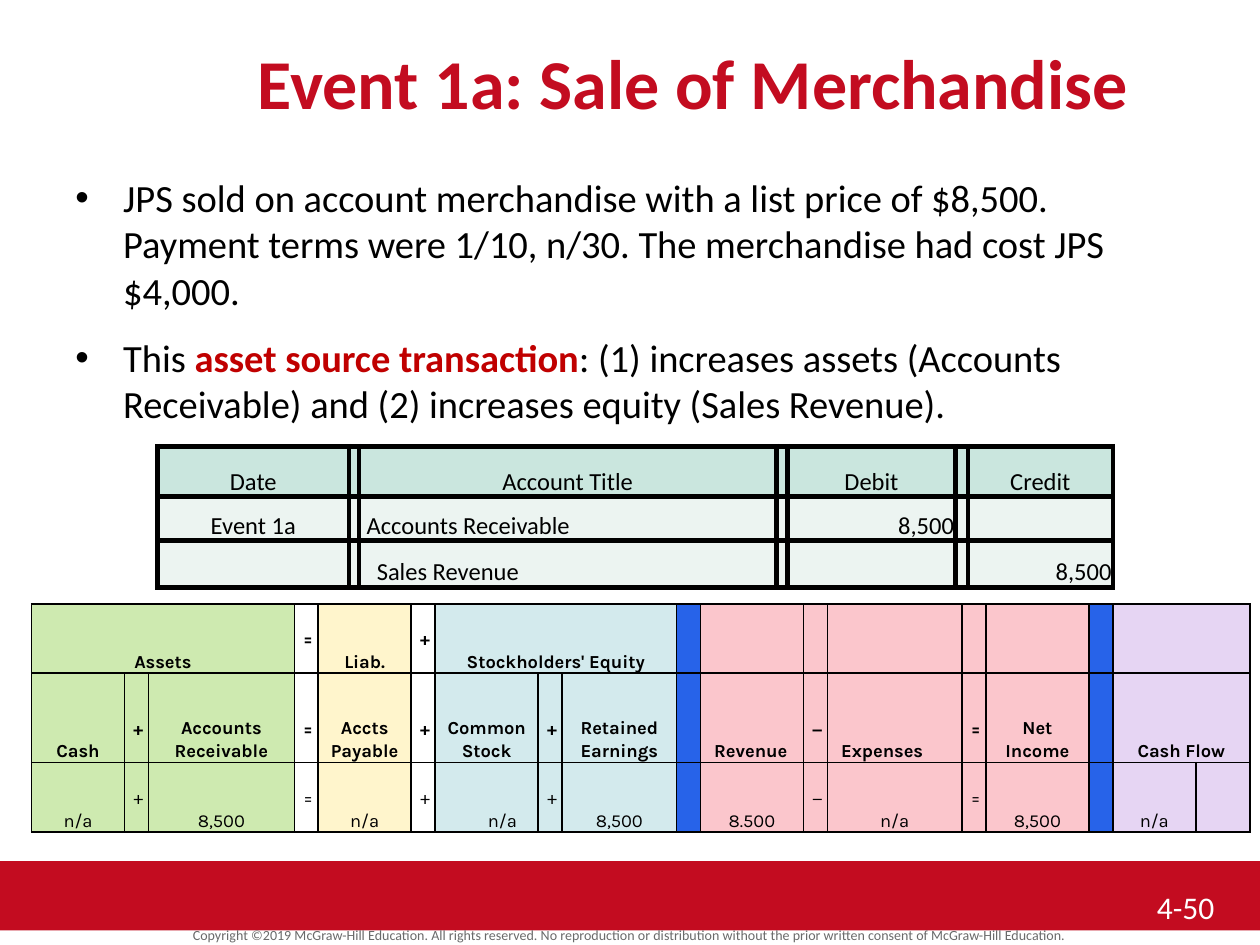
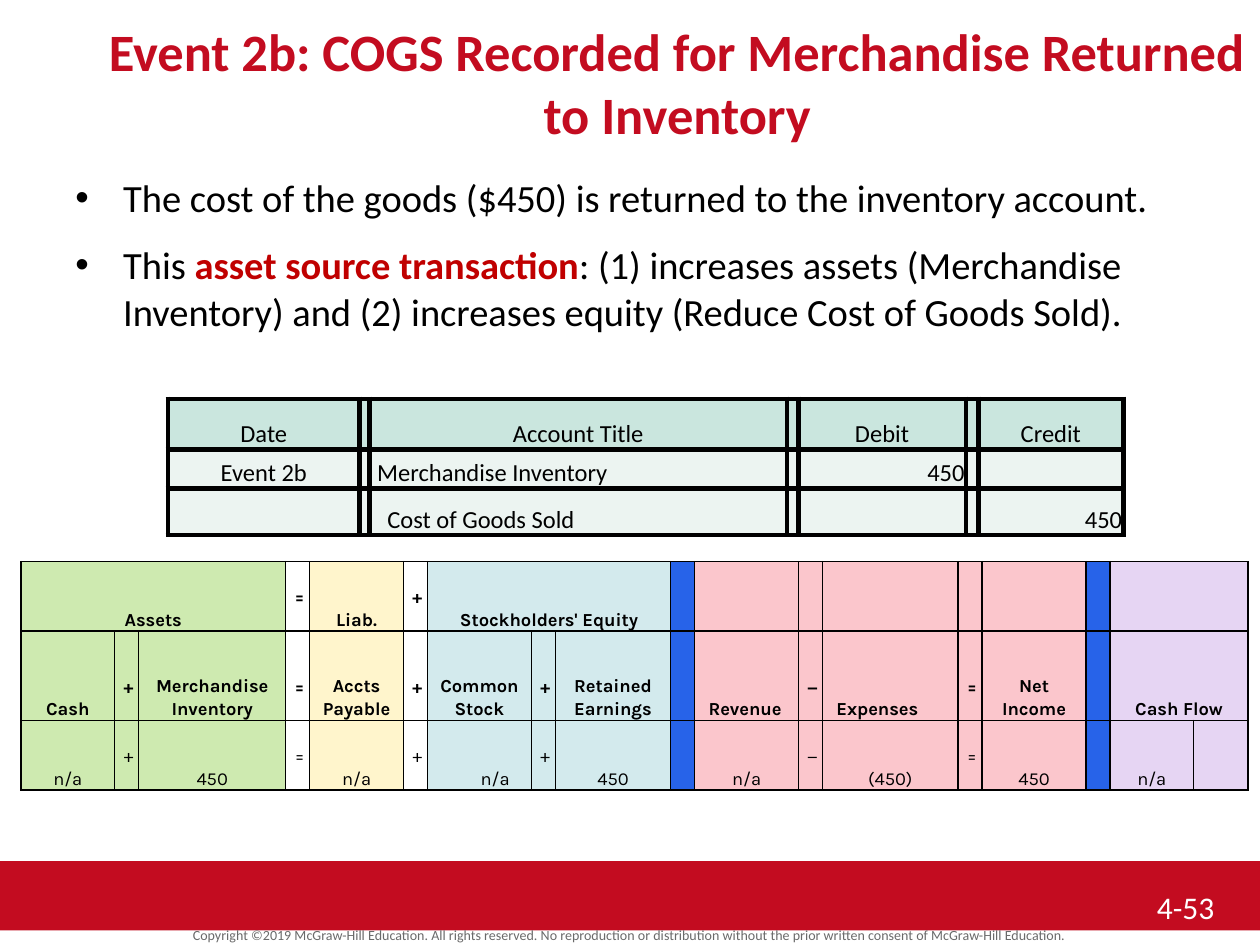
import dataclasses

import lxml.etree
import pptx
import pptx.dml.color
import pptx.enum.shapes
import pptx.enum.text
import pptx.oxml
import pptx.oxml.ns
import pptx.util

RGBColor = pptx.dml.color.RGBColor
Align = pptx.enum.text.PP_ALIGN
Anchor = pptx.enum.text.MSO_ANCHOR
Inches = pptx.util.Inches
Pt = pptx.util.Pt
qn = pptx.oxml.ns.qn

SLIDE_WIDTH, SLIDE_HEIGHT = Inches(10), Inches(7.5)
GRID_COLUMNS, GRID_ROWS = 120, 90

BLACK = RGBColor(0x00, 0x00, 0x00)
WHITE = RGBColor(0xFF, 0xFF, 0xFF)
BRAND_RED = RGBColor(0xC3, 0x0C, 0x20)
TERM_RED = RGBColor(0xC0, 0x00, 0x00)
GRAY = RGBColor(0x6A, 0x6A, 0x6A)
JOURNAL_HEAD = RGBColor(0xCA, 0xE6, 0xDE)
JOURNAL_BODY = RGBColor(0xEC, 0xF4, 0xF1)
ASSETS = RGBColor(0xCE, 0xEA, 0xB0)
LIABILITIES = RGBColor(0xFF, 0xF5, 0xCC)
EQUITY = RGBColor(0xD3, 0xEA, 0xED)
DIVIDER = RGBColor(0x27, 0x63, 0xE9)
INCOME = RGBColor(0xFB, 0xC6, 0xCC)
CASH_FLOW = RGBColor(0xE6, 0xD5, 0xF3)

COPYRIGHT = ("Copyright ©2019 McGraw-Hill Education. All rights reserved. No reproduction "
             "or distribution without the prior written consent of McGraw-Hill Education.")
TERM = "asset source transaction"

JOURNAL_COLUMNS = [1.52, 0.08, 3.31, 0.09, 1.33, 0.1, 1.15]
EQUATION_COLUMNS = [0.74, 0.19, 1.16, 0.19, 0.74, 0.19, 0.82, 0.19, 0.91,
                    0.19, 0.82, 0.19, 1.07, 0.19, 0.82, 0.19, 0.66, 0.43]
EQUATION_FILLS = ([ASSETS] * 3 + [None, LIABILITIES, None] + [EQUITY] * 3
                  + [DIVIDER] + [INCOME] * 5 + [DIVIDER] + [CASH_FLOW] * 2)
EQUATION_ROWS = [0.55, 0.71, 0.55]
EQUATION_SPANS = [(0, 0, 2), (0, 6, 8), (0, 16, 17), (1, 16, 17)]
OPERATORS = {1: "+", 3: "=", 5: "+", 7: "+", 11: "−", 13: "="}
GROUPS = {0: "Assets", 3: "=", 4: "Liab.", 5: "+", 6: "Stockholders' Equity"}
AMOUNT_COLUMNS = [0, 2, 4, 6, 8, 10, 12, 14, 16]
LEFT_HEADINGS = ("Revenue", "Expenses")
COMMON_STOCK = 6


@dataclasses.dataclass
class Box:
    column: float
    row: float
    columns: float
    rows: float

    def place(self):
        across, down = SLIDE_WIDTH / GRID_COLUMNS, SLIDE_HEIGHT / GRID_ROWS
        return (round(self.column * across), round(self.row * down),
                round(self.columns * across), round(self.rows * down))


def write(para, text, size=22, color=BLACK, bold=False, font="Calibri",
          align=Align.LEFT, line_spacing=1.0):
    span = para.add_run()
    span.text = text
    span.font.name = font
    span.font.size = Pt(size)
    span.font.bold = bold
    span.font.color.rgb = color
    para.alignment = align
    para.line_spacing = line_spacing


def add_text_box(page, box):
    frame = page.shapes.add_textbox(*box.place()).text_frame
    frame.word_wrap = True
    return frame


def add_bullet(para):
    properties = para._p.get_or_add_pPr()
    properties.set("marL", str(Inches(0.38)))
    properties.set("indent", str(-Inches(0.38)))
    lxml.etree.SubElement(properties, qn("a:buFont")).set("typeface", "Arial")
    lxml.etree.SubElement(properties, qn("a:buChar")).set("char", "•")


def add_title(page, box, text, size):
    title = page.shapes.title
    title.left, title.top, title.width, title.height = box.place()
    frame = title.text_frame
    frame.word_wrap = True
    frame.auto_size = pptx.enum.text.MSO_AUTO_SIZE.NONE
    frame.vertical_anchor = Anchor.TOP
    write(frame.paragraphs[0], text, size=size, color=BRAND_RED, bold=True, align=Align.CENTER)


def add_body(page, box, fact, effect):
    frame = add_text_box(page, box)
    first, second = frame.paragraphs[0], frame.add_paragraph()
    add_bullet(first)
    write(first, fact)
    add_bullet(second)
    second.space_before = Pt(12)
    write(second, "This ")
    write(second, TERM, color=TERM_RED, bold=True)
    write(second, effect)


def add_footer(page, number):
    band = page.shapes.add_shape(pptx.enum.shapes.MSO_SHAPE.RECTANGLE,
                                 *Box(0, 82, GRID_COLUMNS, 6.6).place())
    band.shadow.inherit = False
    band.fill.solid()
    band.fill.fore_color.rgb = BRAND_RED
    band.line.fill.background()
    frame = add_text_box(page, Box(0, 88, GRID_COLUMNS, 2.3))
    frame.margin_top = frame.margin_bottom = 0
    frame.vertical_anchor = Anchor.MIDDLE
    write(frame.paragraphs[0], COPYRIGHT, size=8, color=GRAY,
          align=Align.CENTER, line_spacing=0.8)
    frame = add_text_box(page, Box(109, 84, 11, 5))
    write(frame.paragraphs[0], number, size=18, color=WHITE)


def draw_borders(cell, width):
    properties = cell._tc.get_or_add_tcPr()
    for index, side in enumerate(("lnL", "lnR", "lnT", "lnB")):
        line = pptx.oxml.parse_xml(
            f'<a:{side} {pptx.oxml.ns.nsdecls("a")} w="{Pt(width)}">'
            f'<a:solidFill><a:srgbClr val="{BLACK}"/></a:solidFill></a:{side}>')
        properties.insert(index, line)


def format_cell(cell, text, fill, border, left=0.0, right=0.0, bottom=0.0, **style):
    cell.margin_left, cell.margin_right = Inches(left), Inches(right)
    cell.margin_top, cell.margin_bottom = 0, Inches(bottom)
    cell.vertical_anchor = Anchor.BOTTOM
    if fill is None:
        cell.fill.background()
    else:
        cell.fill.solid()
        cell.fill.fore_color.rgb = fill
    draw_borders(cell, border)
    if text:
        write(cell.text_frame.paragraphs[0], text, **style)


def add_grid(page, box, column_widths, row_heights):
    left, top, width, height = box.place()
    table = page.shapes.add_table(len(row_heights), len(column_widths),
                                  left, top, width, height).table
    for column, share in zip(table.columns, column_widths):
        column.width = round(width * share / sum(column_widths))
    for row, share in zip(table.rows, row_heights):
        row.height = round(height * share / sum(row_heights))
    return table


def add_journal(page, box, row_heights, event, debited, credited, amount):
    table = add_grid(page, box, JOURNAL_COLUMNS, row_heights)
    rows = [{0: "Date", 2: "Account Title", 4: "Debit", 6: "Credit"},
            {0: event, 2: debited, 4: amount},
            {2: credited, 6: amount}]
    for row, texts in enumerate(rows):
        for column in range(len(JOURNAL_COLUMNS)):
            align, left = Align.CENTER, 0.01
            if row and column == 2:
                align, left = Align.LEFT, (0.06, 0.14)[row - 1]
            elif row and column > 2:
                align = Align.RIGHT
            format_cell(table.cell(row, column), texts.get(column),
                        JOURNAL_BODY if row else JOURNAL_HEAD, 3,
                        left=left, right=0.01, size=14, align=align)


def add_equation(page, box, asset, amounts):
    table = add_grid(page, box, EQUATION_COLUMNS, EQUATION_ROWS)
    headings = ["Cash", asset, "Accts Payable", "Common Stock", "Retained Earnings",
                "Revenue", "Expenses", "Net Income", "Cash Flow"]
    rows = [GROUPS,
            OPERATORS | dict(zip(AMOUNT_COLUMNS, headings)),
            OPERATORS | dict(zip(AMOUNT_COLUMNS, amounts))]
    for row, texts in enumerate(rows):
        for column, fill in enumerate(EQUATION_FILLS):
            text = texts.get(column)
            left, right, bottom, align = 0.07, 0.07, 0, Align.CENTER
            if column in OPERATORS:
                left, right, bottom = 0.03, 0, 0.18
            elif text in LEFT_HEADINGS:
                left, right, align = 0.11, 0, Align.LEFT
            elif row == 2 and column == COMMON_STOCK:
                left = 0.32
            format_cell(table.cell(row, column), text, fill, 1, left=left, right=right,
                        bottom=bottom, size=10.5, font="Karla", bold=row < 2,
                        align=align, line_spacing=1.07)
    for row, first, last in EQUATION_SPANS:
        table.cell(row, first).merge(table.cell(row, last))


def add_event_slide(deck, number, title, body, journal, equation):
    page = deck.slides.add_slide(deck.slide_layouts[5])
    add_footer(page, number)
    add_title(page, **title)
    add_body(page, Box(6, 16, 108, 62), **body)
    add_journal(page, **journal)
    add_equation(page, **equation)


def main():
    deck = pptx.Presentation()
    deck.slide_width, deck.slide_height = SLIDE_WIDTH, SLIDE_HEIGHT
    add_event_slide(
        deck, "4-50",
        title={"box": Box(12, 3.2, 108, 8), "text": "Event 1a: Sale of Merchandise", "size": 40},
        body={"fact": "JPS sold on account merchandise with a list price of $8,500. Payment "
                      "terms were 1/10, n/30. The merchandise had cost JPS $4,000.",
              "effect": ": (1) increases assets (Accounts Receivable) and "
                        "(2) increases equity (Sales Revenue)."},
        journal={"box": Box(15, 42.5, 91, 13.44), "row_heights": [0.4, 0.35, 0.37],
                 "event": "Event 1a", "debited": "Accounts Receivable",
                 "credited": "Sales Revenue", "amount": "8,500"},
        equation={"box": Box(3, 57.5, 116.1, 21.72), "asset": "Accounts Receivable",
                  "amounts": ["n/a", "8,500", "n/a", "n/a", "8,500",
                              "8.500", "n/a", "8,500", "n/a"]})
    add_event_slide(
        deck, "4-53",
        title={"box": Box(9, 1.2, 111, 8), "size": 30,
               "text": "Event 2b: COGS Recorded for Merchandise Returned to Inventory"},
        body={"fact": "The cost of the goods ($450) is returned to the inventory account.",
              "effect": ": (1) increases assets (Merchandise Inventory) and "
                        "(2) increases equity (Reduce Cost of Goods Sold)."},
        journal={"box": Box(16, 38, 91, 12.96), "row_heights": [0.4, 0.31, 0.37],
                 "event": "Event 2b", "debited": "Merchandise Inventory",
                 "credited": "Cost of Goods Sold", "amount": "450"},
        equation={"box": Box(2, 53.5, 116.9, 21.72), "asset": "Merchandise Inventory",
                  "amounts": ["n/a", "450", "n/a", "n/a", "450",
                              "n/a", "(450)", "450", "n/a"]})
    deck.save("out.pptx")


if __name__ == "__main__":
    main()
